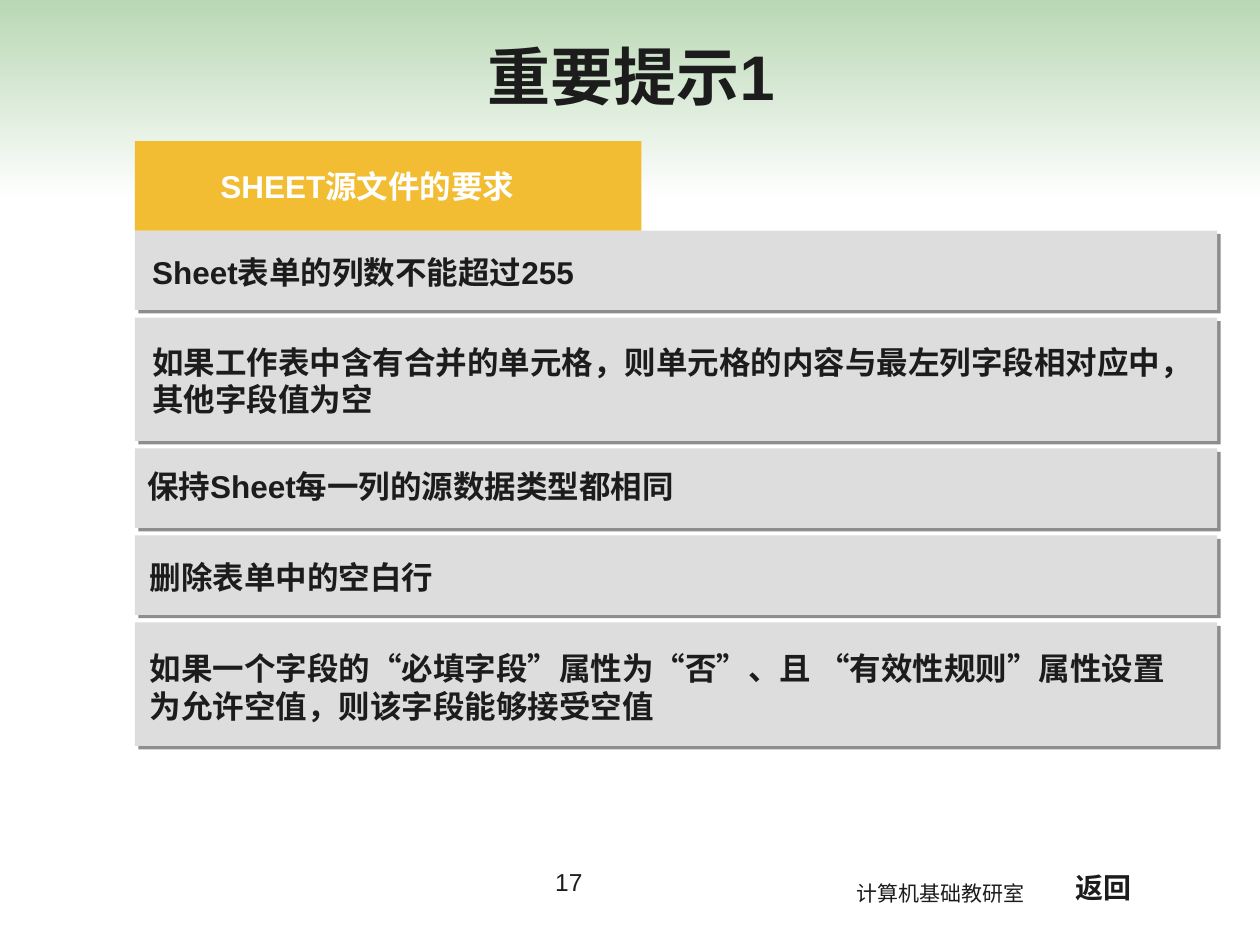
from lxml import etree
from pptx import Presentation
from pptx import util as u
from pptx.dml.color import RGBColor
from pptx.enum import shapes, text
from pptx.oxml.ns import qn

COLORS = {
    "ink": "1C1C1C",
    "white": "FFFFFF",
    "green": "4E9D41",
    "panel": "DDDDDD",
    "amber": "F3BD33",
}
WIDTH, HEIGHT = u.Inches(10), u.Inches(7.5)
COLUMNS, ROWS = 100, 75
GAP = 0.6

REQUIREMENTS = [
    ("Sheet表单的列数不能超过255", 1, 0.4, 1.3),
    ("如果工作表中含有合并的单元格，则单元格的内容与最左列字段相对应中，其他字段值为空", 2, 0.4, 1.5),
    ("保持Sheet每一列的源数据类型都相同", 1, 0, 1),
    ("删除表单中的空白行", 1, 0.2, 1.3),
    ("如果一个字段的“必填字段”属性为“否”、且 “有效性规则”属性设置为允许空值，则该字段能够接受空值", 2, 0.2, 1.6),
]


def grid(box):
    x, y, w, h = box
    column, row = WIDTH / COLUMNS, HEIGHT / ROWS
    return [round(v) for v in (x * column, y * row, w * column, h * row)]


def rgb(name):
    return RGBColor.from_string(COLORS[name])


def add_shadow(shape):
    effects = etree.SubElement(shape._element.spPr, qn("a:effectLst"))
    shadow = etree.SubElement(effects, qn("a:outerShdw"), dist=str(u.Pt(2.8)),
                              dir="2700000", algn="ctr", rotWithShape="0")
    tone = etree.SubElement(shadow, qn("a:srgbClr"), val=COLORS["ink"])
    etree.SubElement(tone, qn("a:alpha"), val="50000")


def write(frame, words, size=18, color="ink", bold=True, align=text.PP_ALIGN.LEFT,
          font="Arial", anchor=text.MSO_ANCHOR.TOP):
    frame.word_wrap = True
    frame.vertical_anchor = anchor
    paragraph = frame.paragraphs[0]
    paragraph.alignment = align
    run = paragraph.add_run()
    run.text = words
    run.font.size = u.Pt(size)
    run.font.bold = bold
    run.font.name = font
    run.font.color.rgb = rgb(color)
    properties = run._r.get_or_add_rPr()
    properties.set("lang", "zh-CN")
    etree.SubElement(properties, qn("a:ea"), typeface="Noto Sans CJK JP")


def add_text(slide, box, words, **style):
    write(slide.shapes.add_textbox(*grid(box)).text_frame, words, **style)


def add_block(slide, box, color):
    block = slide.shapes.add_shape(shapes.MSO_SHAPE.RECTANGLE, *grid(box))
    block.fill.solid()
    block.fill.fore_color.rgb = rgb(color)
    block.line.fill.background()
    return block


def add_backdrop(slide, box):
    band = add_block(slide, box, "white")
    band.shadow.inherit = False
    band.fill.gradient()
    band.fill.gradient_angle = 270
    for stop, color in zip(band.fill.gradient_stops, ("green", "white")):
        stop.color.rgb = rgb(color)
    for tone in band._element.spPr.iter(qn("a:srgbClr")):
        etree.SubElement(tone, qn("a:alpha"), val="40000")
    slide.shapes.element.insert(2, band._element)


def add_title(slide, box):
    title = slide.shapes.title
    title.left, title.top, title.width, title.height = grid(box)
    write(title.text_frame, "重要提示1", size=36, align=text.PP_ALIGN.CENTER,
          anchor=text.MSO_ANCHOR.MIDDLE)


def add_heading(slide, box):
    x, y, w, _ = box
    add_block(slide, box, "amber").shadow.inherit = False
    add_text(slide, (x + 1.7, y + 1.6, w - 6.7, 4), "SHEET源文件的要求",
             color="white", align=text.PP_ALIGN.CENTER)


def add_requirements(slide, box):
    x, y, w, _ = box
    for words, lines, indent, drop in REQUIREMENTS:
        height = 2.8 + 3.5 * lines
        add_shadow(add_block(slide, (x, y, w, height), "panel"))
        add_text(slide, (x + indent, y + drop, w - 1.2, 0.9 + 3.1 * lines), words)
        y += height + GAP


def add_footer(slide, box):
    x, y, _, _ = box
    add_text(slide, (x, y, 23.3, 5.2), "17", size=14, bold=False,
             align=text.PP_ALIGN.CENTER)
    add_text(slide, (x + 33.5, y + 1.1, 17.1, 3), "计算机基础教研室", size=12,
             bold=False, font="Noto Sans CJK JP")
    add_text(slide, (x + 49.7, y + 0.3, 8.8, 3.7), "返回", size=16,
             align=text.PP_ALIGN.CENTER)


def main():
    deck = Presentation()
    deck.slide_width, deck.slide_height = WIDTH, HEIGHT
    slide = deck.slides.add_slide(deck.slide_layouts[5])
    add_backdrop(slide, (0, 0, COLUMNS, 15.7))
    add_title(slide, (2.6, 0, 95, 11.9))
    add_requirements(slide, (10.7, 18.3, 85.9, 40.9))
    add_heading(slide, (10.7, 11.2, 40.2, 7.1))
    add_footer(slide, (33.5, 68.3, 58.5, 5.2))
    deck.save("out.pptx")


if __name__ == "__main__":
    main()
